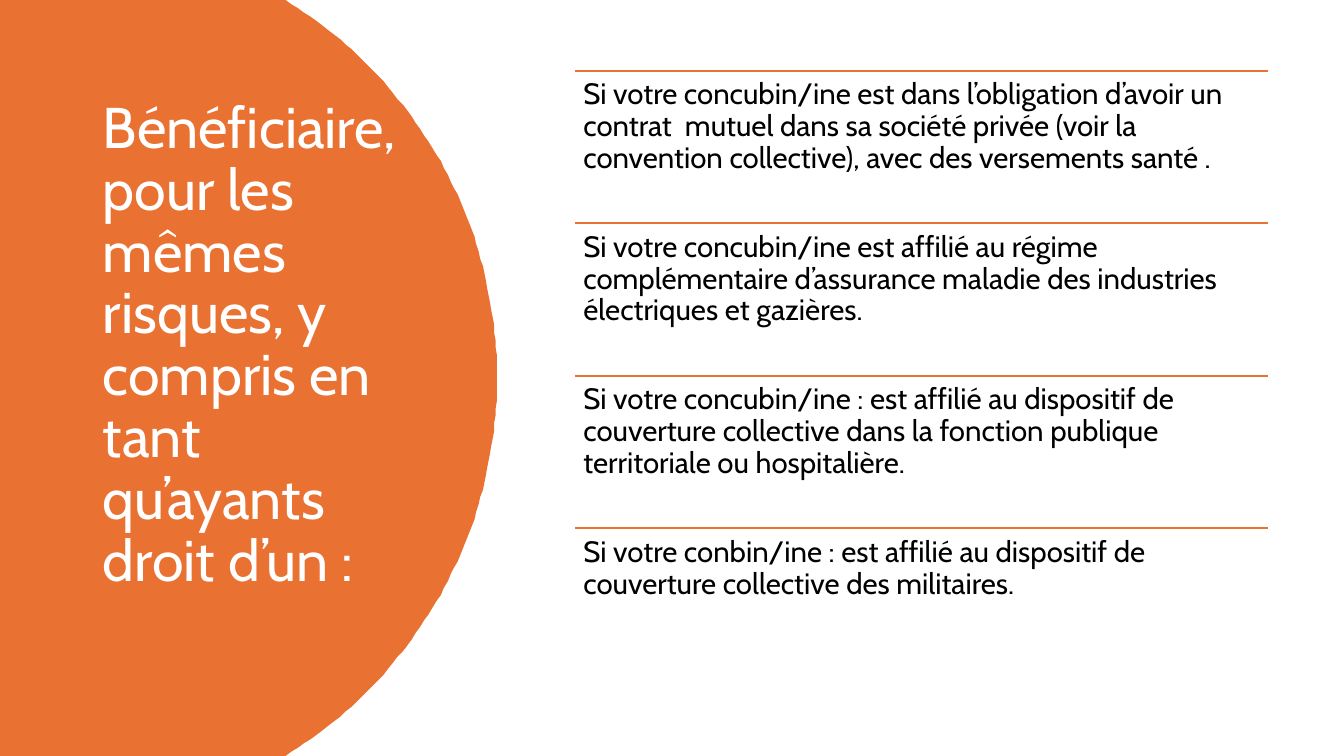
import math

import pptx
import pptx.dml.color
import pptx.enum.shapes
import pptx.enum.text
import pptx.oxml.ns
import pptx.util
from lxml import etree

Pt = pptx.util.Pt

ORANGE = "E97132"
WHITE = "FFFFFF"
BLACK = "000000"
FONT = "Cabin"

SLIDE_WIDTH, SLIDE_HEIGHT = 960, 540
PANEL_RIGHT = 355
PANEL_RADIUS = 316.4
ARC_STEPS = 120

CASES_LEFT, CASES_TOP = 410.4, 50.4
CASE_WIDTH, CASE_HEIGHT = 495.4, 109

TITLE = "Bénéficiaire, pour les mêmes risques, y compris en tant qu’ayants droit d’un :"
CASES = [
    "Si votre concubin/ine est dans l’obligation d’avoir un contrat  mutuel dans sa "
    "société privée (voir la convention collective), avec des versements santé .",
    "Si votre concubin/ine est affilié au régime  complémentaire d’assurance maladie "
    "des industries électriques et gazières.",
    "Si votre concubin/ine : est affilié au dispositif de couverture collective dans "
    "la fonction publique territoriale ou hospitalière.",
    "Si votre conbin/ine : est affilié au dispositif de couverture collective des militaires.",
]


def color(value):
    return pptx.dml.color.RGBColor.from_string(value)


def write(frame, text, size, ink):
    frame.word_wrap = True
    frame.auto_size = pptx.enum.text.MSO_AUTO_SIZE.NONE
    paragraph = frame.paragraphs[0]
    paragraph.text = text
    paragraph.alignment = pptx.enum.text.PP_ALIGN.LEFT
    paragraph.line_spacing = 0.9
    paragraph.font.name = FONT
    paragraph.font.size = Pt(size)
    paragraph.font.color.rgb = color(ink)


def add_panel(slide):
    center_x, center_y = PANEL_RIGHT - PANEL_RADIUS, SLIDE_HEIGHT / 2
    half_angle = math.asin(center_y / PANEL_RADIUS)
    angles = [half_angle * (2 * step / ARC_STEPS - 1) for step in range(ARC_STEPS + 1)]
    arc = [
        (center_x + PANEL_RADIUS * math.cos(angle), center_y + PANEL_RADIUS * math.sin(angle))
        for angle in angles
    ]
    outline = slide.shapes.build_freeform(0, 0, scale=Pt(1))
    outline.add_line_segments(arc + [(0, SLIDE_HEIGHT)], close=True)
    panel = outline.convert_to_shape()
    panel.shadow.inherit = False
    panel.fill.solid()
    panel.fill.fore_color.rgb = color(ORANGE)
    panel.line.fill.background()
    return panel


def place_title(slide, panel):
    title = slide.shapes.title
    title.left, title.top, title.width, title.height = Pt(66.2), Pt(50.4), Pt(232.6), Pt(438.5)
    write(title.text_frame, TITLE, 41, WHITE)
    title.text_frame.vertical_anchor = pptx.enum.text.MSO_ANCHOR.MIDDLE
    title.text_frame.margin_bottom = Pt(48)
    panel.element.addnext(title.element)


def add_rule(slide, top):
    rule = slide.shapes.add_connector(
        pptx.enum.shapes.MSO_CONNECTOR.STRAIGHT,
        Pt(CASES_LEFT), Pt(top), Pt(CASES_LEFT + CASE_WIDTH), Pt(top),
    )
    rule.line.color.rgb = color(ORANGE)
    rule.line.width = Pt(1.5)
    properties = rule.element.find(pptx.oxml.ns.qn("p:spPr"))
    etree.SubElement(properties, pptx.oxml.ns.qn("a:effectLst"))


def add_case(slide, text, top):
    add_rule(slide, top)
    case = slide.shapes.add_textbox(Pt(CASES_LEFT), Pt(top), Pt(CASE_WIDTH), Pt(CASE_HEIGHT))
    frame = case.text_frame
    frame.margin_left = frame.margin_right = Pt(6.3)
    frame.margin_top = frame.margin_bottom = Pt(6.3)
    write(frame, text, 21, BLACK)


def main():
    presentation = pptx.Presentation()
    presentation.slide_width = Pt(SLIDE_WIDTH)
    presentation.slide_height = Pt(SLIDE_HEIGHT)
    slide = presentation.slides.add_slide(presentation.slide_layouts[5])
    place_title(slide, add_panel(slide))
    for index, text in enumerate(CASES):
        add_case(slide, text, CASES_TOP + index * CASE_HEIGHT)
    presentation.save("out.pptx")


if __name__ == "__main__":
    main()
